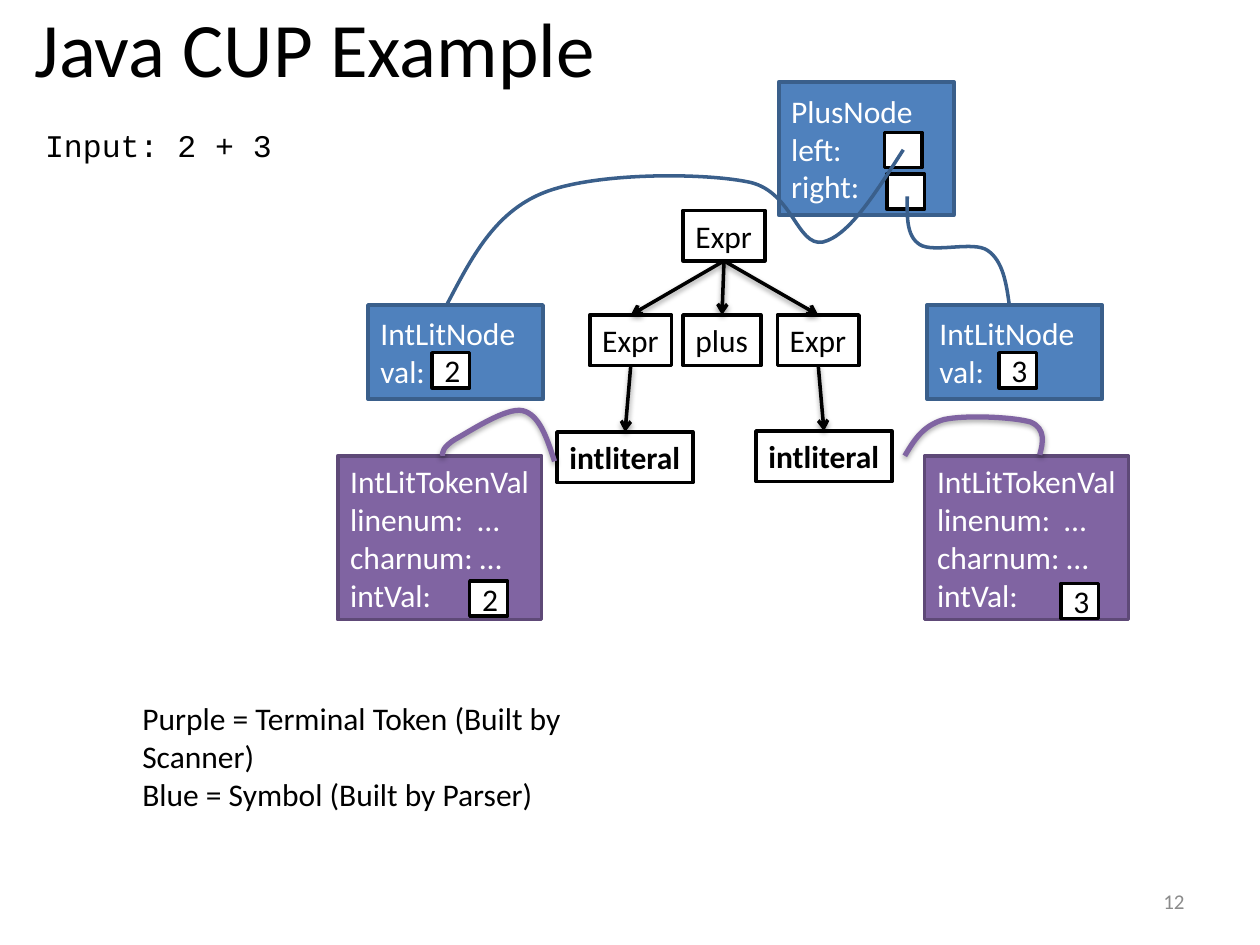
"""Build the Java CUP parse tree slide with its token and symbol nodes."""
from lxml import etree
from pptx import Presentation
from pptx import util as u
from pptx.dml.color import RGBColor
from pptx.enum import shapes, text
from pptx.oxml.ns import qn

BLACK, WHITE = "000000", "FFFFFF"
PURPLE, PURPLE_EDGE = "8064A2", "5E4977"
BLUE, BLUE_EDGE = "4F81BD", "3A5F8B"
LEFT, CENTER, RIGHT = text.PP_ALIGN.LEFT, text.PP_ALIGN.CENTER, text.PP_ALIGN.RIGHT
TOP, MIDDLE = text.MSO_ANCHOR.TOP, text.MSO_ANCHOR.MIDDLE

LABELS = [
    (["Java CUP Example"], (-5.08, -0.64, 22.86, 3.18), BLACK, CENTER,
     {"vertical_anchor": MIDDLE, "word_wrap": True}, {"size": u.Pt(44)}),
    (["Input: 2 + 3"], (0.66, 2.41, 5.08, 1.02), BLACK, LEFT, {}, {"name": "Courier New"}),
    (["Purple = Terminal Token (Built by Scanner)", "Blue = Symbol (Built by Parser)"],
     (2.62, 13.97, 11.33, 1.78), BLACK, LEFT, {}, {}),
    (["12"], (18.21, 17.65, 5.92, 1.02), "8B8B8B", RIGHT,
     {"vertical_anchor": MIDDLE, "word_wrap": True}, {"size": u.Pt(12)}),
]
TREE = {
    "root": ("Expr", 13.77, 4.24, 1.65),
    "left": ("Expr", 11.89, 6.35, 1.65),
    "right": ("Expr", 15.67, 6.35, 1.65),
    "operator": ("plus", 13.77, 6.35, 1.57),
    "left literal": ("intliteral", 11.23, 8.71, 2.74),
    "right literal": ("intliteral", 15.24, 8.69, 2.74),
}
BRANCHES = [("root", "left"), ("root", "right"), ("root", "operator"),
            ("left", "left literal"), ("right", "right literal")]
TOKEN = ["IntLitTokenVal", "linenum:  …", "charnum: …", "intVal:"]
TOKEN_LEFTS = [6.81, 18.64]
SYMBOLS = [
    (["IntLitNode", "val:"], (7.42, 6.15, 3.53, 1.9)),
    (["IntLitNode", "val:"], (18.69, 6.15, 3.53, 1.9)),
    (["PlusNode", "left:", "right:"], (15.7, 1.65, 3.53, 2.69)),
]
POINTER_SLOTS = [("", 17.83, 2.67), ("", 17.88, 3.51)]
VALUE_SLOTS = [("2", 8.71, 7.11), ("3", 20.14, 7.11), ("2", 9.47, 11.71), ("3", 21.39, 11.76)]
TOKEN_CURVES = [
    [(11.18, 9.3), (11.02, 8.81), (10.87, 8.36), (10.54, 8.28), (10.21, 8.2),
     (9.45, 8.71), (9.17, 8.86), (8.92, 9.02), (8.92, 9.12), (8.92, 9.19)],
    [(18.24, 9.19), (18.42, 8.89), (18.59, 8.59), (19.02, 8.46), (19.46, 8.36),
     (20.45, 8.41), (20.78, 8.51), (21.08, 8.64), (21.03, 8.92), (20.96, 9.17)],
]
POINTER_CURVES = [
    [(18.21, 3.02), (17.65, 3.89), (17.12, 4.75), (16.59, 4.88), (16.05, 4.98),
     (15.98, 3.81), (15.04, 3.66), (14.1, 3.48), (11.96, 3.48), (10.95, 3.89),
     (9.96, 4.29), (9.5, 5.21), (9.02, 6.12)],
    [(18.29, 3.96), (18.29, 4.34), (18.26, 4.75), (18.54, 4.93), (18.82, 5.11),
     (19.63, 4.85), (19.91, 5.05), (20.22, 5.26), (20.29, 5.72), (20.35, 6.17)],
]
FRAME = {"word_wrap": False, "vertical_anchor": TOP,
         "margin_left": u.Cm(0.25), "margin_right": u.Cm(0.25),
         "margin_top": u.Cm(0.13), "margin_bottom": u.Cm(0.13)}
FONT = {"name": "Calibri", "size": u.Pt(18), "bold": False}


def rgb(value):
    return RGBColor.from_string(value)


def apply(target, values):
    for key, value in values.items():
        setattr(target, key, value)


def write(holder, lines, color, align=LEFT, frame=None, font=None):
    body = holder.text_frame
    apply(body, FRAME | (frame or {}))
    body.text = "\n".join(lines)
    for paragraph in body.paragraphs:
        paragraph.alignment = align
        apply(paragraph.font, FONT | (font or {}))
        paragraph.font.color.rgb = rgb(color)


def stroke(part, color, width=2, shadow=0):
    part.line.color.rgb = rgb(color)
    part.line.width = u.Pt(width)
    effects = etree.SubElement(part._element.spPr, qn("a:effectLst"))
    if shadow:
        outer = etree.SubElement(effects, qn("a:outerShdw"), blurRad="40000", dist="20000",
                                 dir="5400000", rotWithShape="0")
        tint = etree.SubElement(outer, qn("a:srgbClr"), val=BLACK)
        etree.SubElement(tint, qn("a:alpha"), val=str(shadow * 1000))


def box(slide, lines, place, fill, edge, color, **style):
    node = slide.shapes.add_shape(shapes.MSO_SHAPE.RECTANGLE, *map(u.Cm, place))
    node.fill.solid()
    node.fill.fore_color.rgb = rgb(fill)
    stroke(node, edge)
    write(node, lines, color, **style)
    return node


def branch(slide, parent, child):
    arrow = slide.shapes.add_connector(shapes.MSO_CONNECTOR.STRAIGHT, 0, 0, 0, 0)
    arrow.begin_connect(parent, 2)
    arrow.end_connect(child, 0)
    stroke(arrow, BLACK, shadow=38)
    etree.SubElement(arrow._element.spPr.find(qn("a:ln")), qn("a:tailEnd"), type="arrow")


def curve(slide, points, color, **style):
    start, *rest = [(u.Cm(x), u.Cm(y)) for x, y in points]
    builder = slide.shapes.build_freeform(*start)
    builder.add_line_segments(rest, close=False)
    link = builder.convert_to_shape()
    link.fill.background()
    stroke(link, color, **style)
    outline = next(link._element.iter(qn("a:path")))
    steps = outline.findall(qn("a:lnTo"))
    for first in range(0, len(steps), 3):
        bezier = etree.SubElement(outline, qn("a:cubicBezTo"))
        for step in steps[first:first + 3]:
            bezier.append(step[0])
            outline.remove(step)


def slots(slide, entries):
    for value, left, top in entries:
        box(slide, [value], (left, top, 0.76, 0.71), WHITE, BLACK, BLACK,
            align=CENTER, frame={"vertical_anchor": MIDDLE, "word_wrap": True})


def main():
    deck = Presentation()
    deck.slide_width, deck.slide_height = u.Cm(25.4), u.Cm(19.05)
    slide = deck.slides.add_slide(deck.slide_layouts[6])
    for lines, place, color, align, frame, font in LABELS:
        label = slide.shapes.add_textbox(*map(u.Cm, place))
        write(label, lines, color, align, frame, font)
    tree = {key: box(slide, [word], (left, top, width, 1.02), WHITE, BLACK, BLACK,
                     font={"bold": word == "intliteral"})
            for key, (word, left, top, width) in TREE.items()}
    for parent, child in BRANCHES:
        branch(slide, tree[parent], tree[child])
    for left in TOKEN_LEFTS:
        box(slide, TOKEN, (left, 9.19, 4.11, 3.3), PURPLE, PURPLE_EDGE, WHITE)
    for points in TOKEN_CURVES:
        curve(slide, points, PURPLE, width=3, shadow=35)
    for lines, place in SYMBOLS:
        box(slide, lines, place, BLUE, BLUE_EDGE, WHITE,
            frame={"vertical_anchor": MIDDLE, "word_wrap": True})
    slots(slide, POINTER_SLOTS)
    for points in POINTER_CURVES:
        curve(slide, points, BLUE_EDGE)
    slots(slide, VALUE_SLOTS)
    deck.save("out.pptx")


if __name__ == "__main__":
    main()
